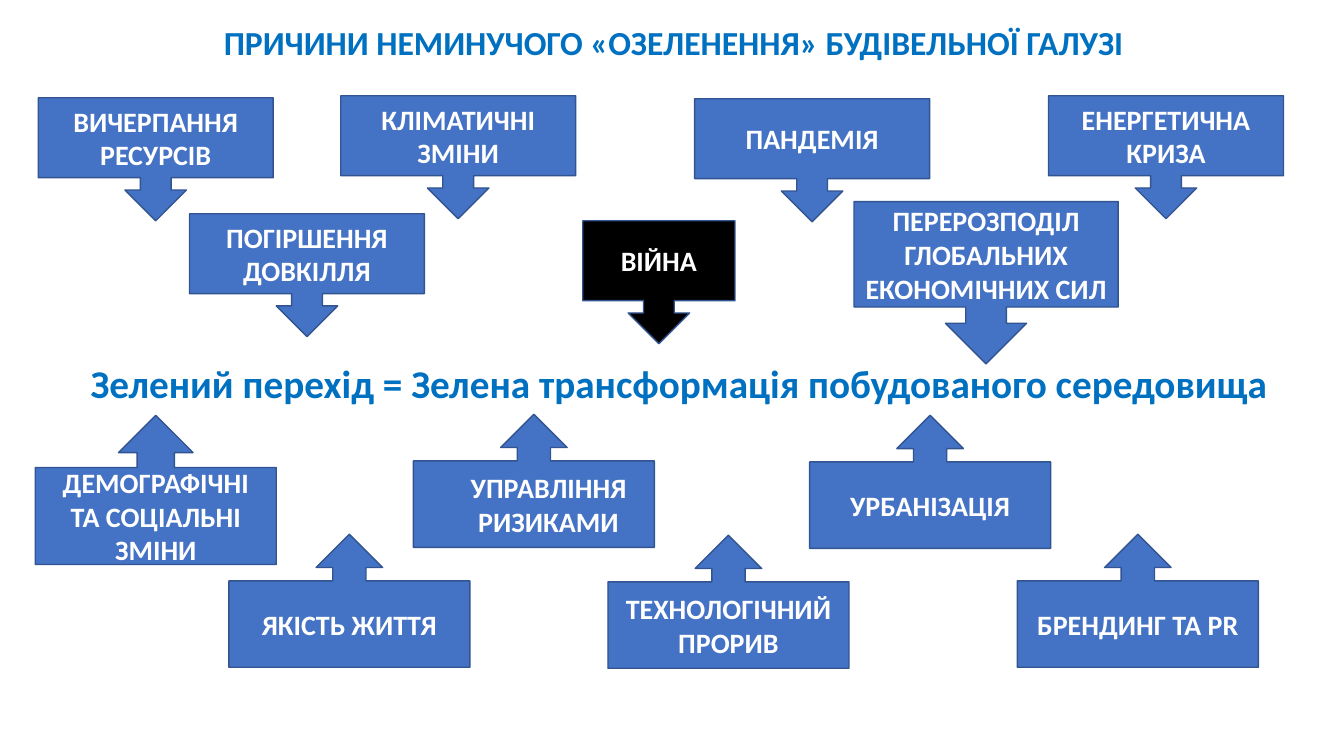
from pptx import Presentation
from pptx.dml.color import RGBColor
from pptx.enum.shapes import MSO_SHAPE
from pptx.enum.text import MSO_ANCHOR, PP_ALIGN
from pptx.util import Pt

PX = 9144
DOWN = MSO_SHAPE.DOWN_ARROW_CALLOUT
UP = MSO_SHAPE.UP_ARROW_CALLOUT
MIDDLE = MSO_ANCHOR.MIDDLE
LEFT, CENTER = PP_ALIGN.LEFT, PP_ALIGN.CENTER
BLUE, EDGE, BLACK, WHITE, HEAD = "4472C4", "325491", "000000", "FFFFFF", "0070C0"
FONT = {"name": "Calibri", "bold": True}
PAD = 10

TITLE = "ПРИЧИНИ НЕМИНУЧОГО «ОЗЕЛЕНЕННЯ» БУДІВЕЛЬНОЇ ГАЛУЗІ "
GOAL = "Зелений перехід = Зелена трансформація побудованого середовища"

ABOVE = [
    ("ВИЧЕРПАННЯ РЕСУРСІВ", (38, 97, 233, 122), BLUE),
    ("ПОГІРШЕННЯ ДОВКІЛЛЯ", (188, 212, 233, 122), BLUE),
    ("КЛІМАТИЧНІ ЗМІНИ", (338, 95, 233, 122), BLUE),
    ("ВІЙНА", (578, 219, 151, 122), BLACK),
    ("ПАНДЕМІЯ", (689, 98, 233, 122), BLUE),
    ("ПЕРЕРОЗПОДІЛ ГЛОБАЛЬНИХ ЕКОНОМІЧНИХ СИЛ ", (847, 200, 262, 161), BLUE),
    ("ЕНЕРГЕТИЧНА КРИЗА", (1040, 95, 233, 122), BLUE),
]
BELOW = [
    ("ДЕМОГРАФІЧНІ ТА СОЦІАЛЬНІ ЗМІНИ", (35, 412, 239, 148), 0),
    ("ЯКІСТЬ ЖИТТЯ", (227, 530, 239, 132), 0),
    ("УПРАВЛІННЯ РИЗИКАМИ", (410, 411, 239, 132), 29),
    ("ТЕХНОЛОГІЧНИЙ ПРОРИВ", (603, 531, 239, 132), 0),
    ("УРБАНІЗАЦІЯ", (803, 412, 239, 132), 0),
    ("БРЕНДИНГ ТА PR", (1009, 530, 239, 132), 0),
]


def color(code):
    """Turn a hex string into a colour."""
    return RGBColor.from_string(code)


def scale(box):
    """Turn a box in px into EMU."""
    return [n * PX for n in box]


def write(frame, text, size, ink, align):
    """Fill a text frame with one bold paragraph."""
    frame.word_wrap = True
    para = frame.paragraphs[0]
    para.alignment = align
    run = para.add_run()
    run.text = text
    for key, value in {**FONT, "size": Pt(size)}.items():
        setattr(run.font, key, value)
    run.font.color.rgb = color(ink)


def heading(slide, box, text, size, align):
    """Place a blue line of text in a box."""
    label = slide.shapes.add_textbox(*scale(box))
    write(label.text_frame, text, size, HEAD, align)


def callout(slide, kind, box, text, fill=BLUE, indent=0):
    """Place one cause as an arrow callout in a box."""
    shape = slide.shapes.add_shape(kind, *scale(box))
    shape.shadow.inherit = False
    shape.fill.solid()
    shape.fill.fore_color.rgb = color(fill)
    shape.line.color.rgb = color(EDGE)
    shape.line.width = Pt(1)
    frame = shape.text_frame
    frame.vertical_anchor = MIDDLE
    frame.margin_left = (PAD + indent) * PX
    write(frame, text, 20, WHITE, CENTER)


def causes(slide):
    """Place the causes above and below the goal."""
    for text, box, fill in ABOVE:
        callout(slide, DOWN, box, text, fill=fill)
    for text, box, indent in BELOW:
        callout(slide, UP, box, text, indent=indent)


def main():
    """Build the slide and save it."""
    deck = Presentation()
    deck.slide_width, deck.slide_height = scale((1333, 750))
    slide = deck.slides.add_slide(deck.slide_layouts[6])
    heading(slide, (168, 17, 1008, 50), TITLE, 24, CENTER)
    heading(slide, (80, 352, 1253, 57), GOAL, 28, LEFT)
    causes(slide)
    deck.save("out.pptx")


if __name__ == "__main__":
    main()
